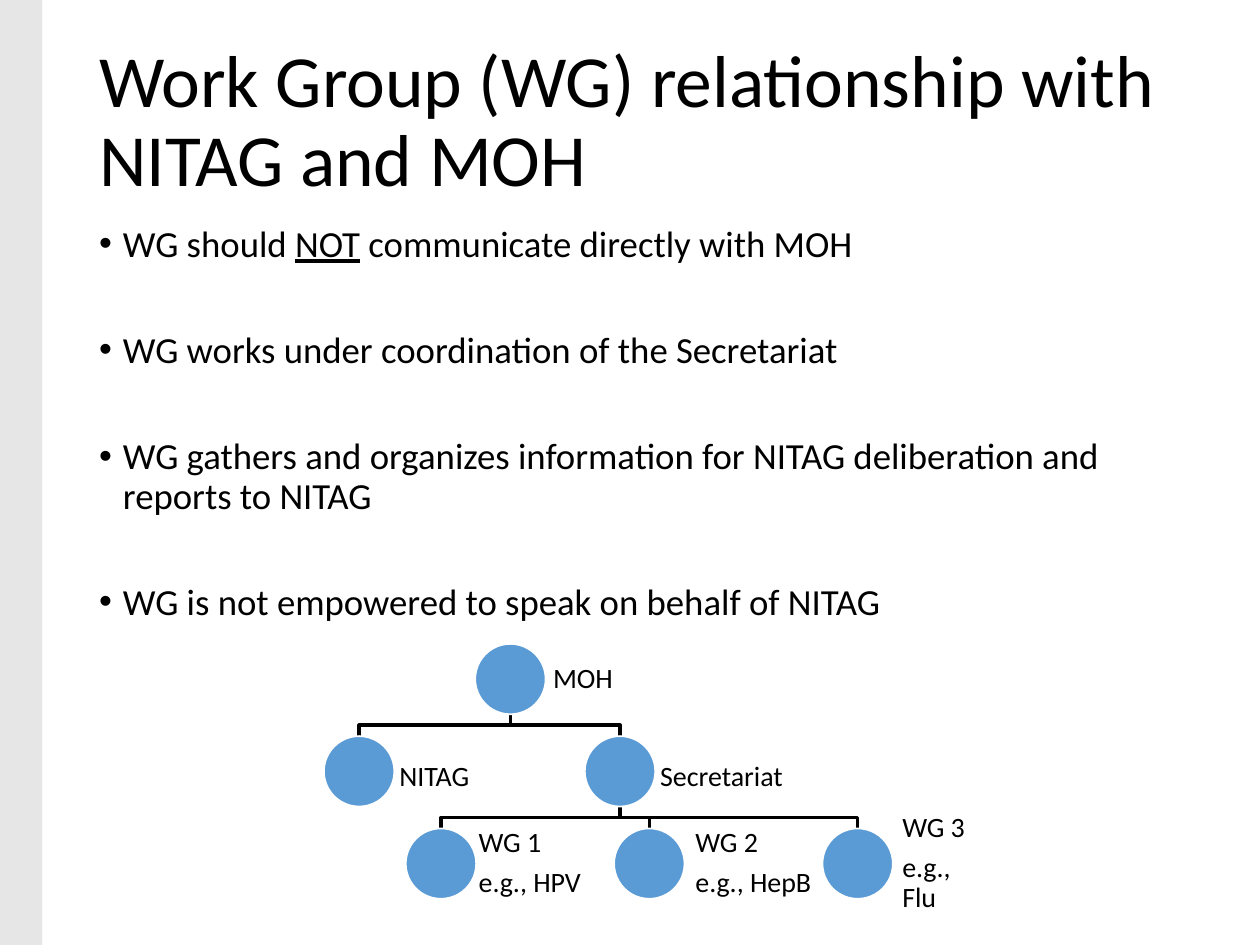
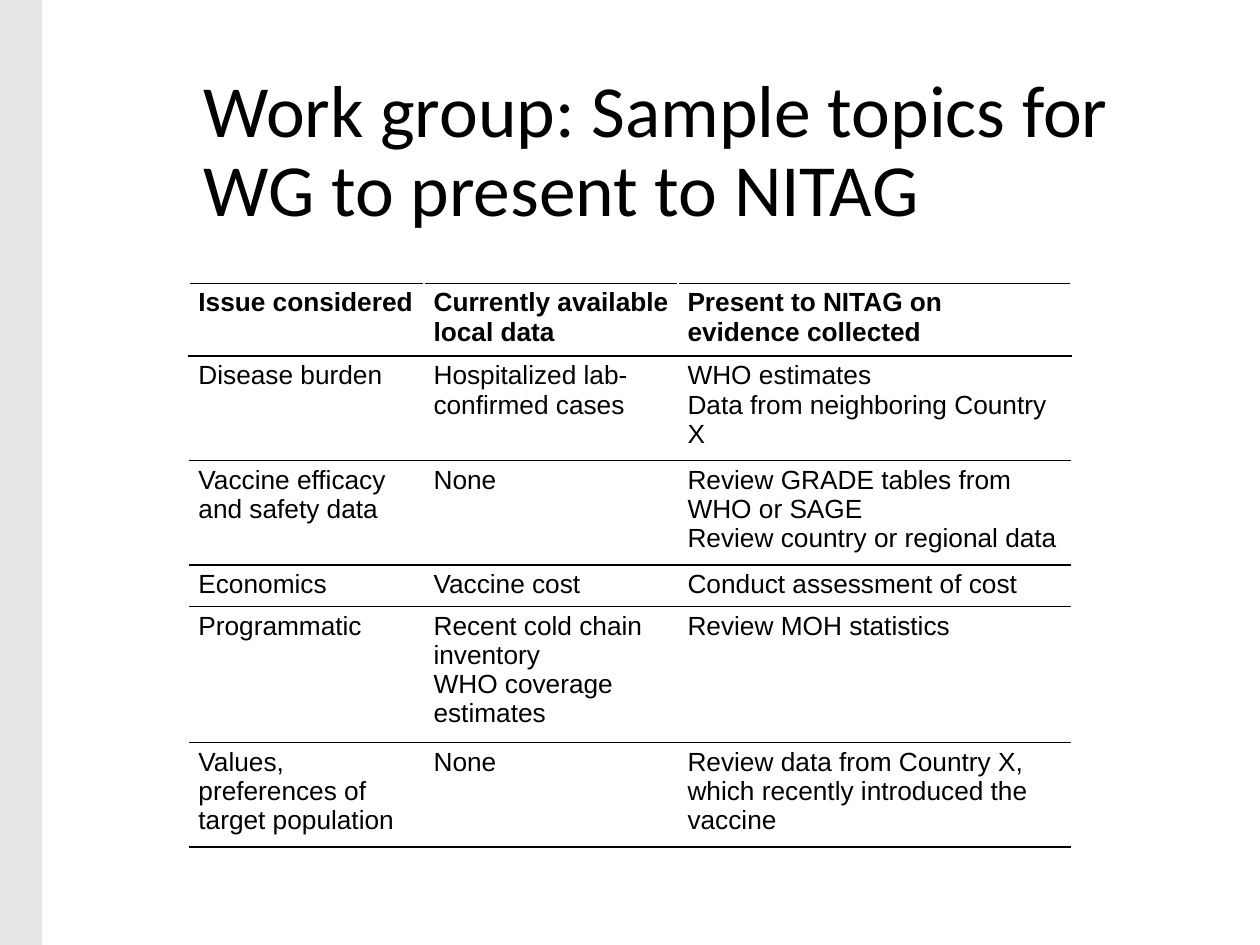
from itertools import product

from lxml.etree import SubElement
from pptx import Presentation
from pptx.dml.color import RGBColor
from pptx.enum.shapes import MSO_SHAPE as Shape
from pptx.enum.text import MSO_ANCHOR as Anchor
from pptx.oxml.ns import qn
from pptx.util import Cm, Pt

BLACK = RGBColor(0x00, 0x00, 0x00)
WHITE = RGBColor(0xFF, 0xFF, 0xFF)
BAND_GREY = RGBColor(0xE7, 0xE6, 0xE6)
NODE_BLUE = RGBColor(0x5B, 0x9B, 0xD5)

SLIDE_WIDTH, SLIDE_HEIGHT = 25.4, 19.05
HEADING_FONT, TABLE_FONT = "Calibri", "Arial"

BULLETS = [
    ["WG should ", "NOT", " communicate directly with MOH"],
    ["WG works under coordination of the Secretariat"],
    ["WG gathers and organizes information for NITAG deliberation and reports to NITAG"],
    ["WG is not empowered to speak on behalf of NITAG"],
]

NODE_SIZE = 1.42
CHART_TOP, LEVEL_STEP = 12.98, 1.86
GROUP_LEFT, GROUP_STEP = 8.89, 4.2

# name: parent, level, centre, label left, label drop, label width, label text
NODES = {
    "moh": (None, 0, 10.29, 10.97, 0, 2.77, "MOH"),
    "nitag": ("moh", 1, 7.24, 7.87, 0.13, 4.88, "NITAG"),
    "secretariat": ("moh", 1, 12.5, 13.13, 0.13, 4.45, "Secretariat"),
    "wg1": ("secretariat", 2, GROUP_LEFT, 9.47, 0, 2.77, "WG 1\ne.g., HPV"),
    "wg2": ("secretariat", 2, GROUP_LEFT + GROUP_STEP, 13.84, 0, 2.77, "WG 2\ne.g., HepB"),
    "wg3": ("secretariat", 2, GROUP_LEFT + 2 * GROUP_STEP, 18.01, 0, 2.08, "WG 3\ne.g., Flu"),
}

COLUMN_WIDTHS = [4.74, 5.12, 7.92]
ROW_HEIGHTS = [1.46, 1.96, 1.96, 0.83, 2.72, 1.96]
TOPICS = [
    ["Issue considered", "Currently available local data", "Present to NITAG on evidence collected"],
    ["Disease burden", "Hospitalized lab-confirmed cases",
     "WHO estimates\nData from neighboring Country X"],
    ["Vaccine efficacy and safety data", "None",
     "Review GRADE tables from WHO or SAGE\nReview country or regional data"],
    ["Economics", "Vaccine cost", "Conduct assessment of cost"],
    ["Programmatic", "Recent cold chain inventory\nWHO coverage estimates", "Review MOH statistics"],
    ["Values, preferences of target population", "None",
     "Review data from Country X, which recently introduced the vaccine"],
]


def format_text(text_frame, size, font=HEADING_FONT, bold=False, line_spacing=None, space_after=0):
    for paragraph in text_frame.paragraphs:
        paragraph.line_spacing = line_spacing
        paragraph.space_after = Pt(space_after)
        for run in paragraph.runs:
            run.font.size = Pt(size)
            run.font.name = font
            run.font.bold = bold
            run.font.color.rgb = BLACK


def add_text_frame(slide, left, top, width, height, anchor=Anchor.MIDDLE):
    box = slide.shapes.add_textbox(Cm(left), Cm(top), Cm(width), Cm(height))
    text_frame = box.text_frame
    text_frame.word_wrap = True
    text_frame.vertical_anchor = anchor
    return text_frame


def add_filled_shape(slide, kind, left, top, width, height, color):
    shape = slide.shapes.add_shape(kind, Cm(left), Cm(top), Cm(width), Cm(height))
    shape.shadow.inherit = False
    shape.fill.solid()
    shape.fill.fore_color.rgb = color
    shape.line.fill.background()
    return shape


def add_titled_slide(presentation, title, left, top, width, height):
    slide = presentation.slides.add_slide(presentation.slide_layouts[6])
    add_filled_shape(slide, Shape.RECTANGLE, 0, 0, 0.85, SLIDE_HEIGHT, BAND_GREY)
    text_frame = add_text_frame(slide, left, top, width, height)
    text_frame.text = title
    format_text(text_frame, 42, line_spacing=0.9)
    return slide


def add_bullets(slide, bullets, left, top, width, height):
    text_frame = add_text_frame(slide, left, top, width, height, Anchor.TOP)
    for index, pieces in enumerate(bullets):
        paragraph = text_frame.add_paragraph() if index else text_frame.paragraphs[0]
        for piece in pieces:
            run = paragraph.add_run()
            run.text = piece
            run.font.underline = piece == "NOT"
    format_text(text_frame, 21, line_spacing=0.9, space_after=38)
    for paragraph in text_frame.paragraphs:
        properties = paragraph._p.get_or_add_pPr()
        properties.set("marL", str(Cm(0.48)))
        properties.set("indent", str(-Cm(0.48)))
        SubElement(properties, qn("a:buFont"), typeface="Arial")
        SubElement(properties, qn("a:buChar"), char="•")


def node_top(level):
    return CHART_TOP + level * LEVEL_STEP


def add_branch(slide, parent, child):
    parent_level, parent_x = NODES[parent][1:3]
    child_level, child_x = NODES[child][1:3]
    start, end = node_top(parent_level) + NODE_SIZE, node_top(child_level)
    bend = (start + end) / 2
    builder = slide.shapes.build_freeform(Cm(parent_x), Cm(start))
    corners = [(parent_x, bend), (child_x, bend), (child_x, end)]
    builder.add_line_segments([(Cm(x), Cm(y)) for x, y in corners], close=False)
    branch = builder.convert_to_shape()
    branch.shadow.inherit = False
    branch.fill.background()
    branch.line.color.rgb = BLACK
    branch.line.width = Pt(2)


def add_node(slide, level, center, label_left, label_drop, label_width, label):
    top = node_top(level)
    circle = add_filled_shape(slide, Shape.OVAL, center - NODE_SIZE / 2, top,
                              NODE_SIZE, NODE_SIZE, NODE_BLUE)
    circle.line.color.rgb = WHITE
    circle.line.width = Pt(1)
    text_frame = add_text_frame(slide, label_left, top + label_drop, label_width, NODE_SIZE)
    text_frame.margin_left = text_frame.margin_right = Cm(0.18)
    text_frame.margin_top = text_frame.margin_bottom = Cm(0.18)
    text_frame.text = label
    format_text(text_frame, 16, line_spacing=0.9, space_after=5.6)


def add_organization_chart(slide):
    for name, (parent, *_) in NODES.items():
        if parent:
            add_branch(slide, parent, name)
    for _, *details in NODES.values():
        add_node(slide, *details)


def set_border(cell, side, color):
    line = SubElement(cell._tc.get_or_add_tcPr(), qn(f"a:ln{side}"), w=str(Pt(1)))
    if color is None:
        SubElement(line, qn("a:noFill"))
    else:
        fill = SubElement(line, qn("a:solidFill"))
        SubElement(fill, qn("a:srgbClr"), val=str(color))


def add_topic_table(slide, left, top):
    frame = slide.shapes.add_table(len(TOPICS), len(COLUMN_WIDTHS), Cm(left), Cm(top),
                                   Cm(sum(COLUMN_WIDTHS)), Cm(sum(ROW_HEIGHTS)))
    table = frame.table
    table.first_row = table.horz_banding = False
    for column, width in zip(table.columns, COLUMN_WIDTHS):
        column.width = Cm(width)
    for row, height in zip(table.rows, ROW_HEIGHTS):
        row.height = Cm(height)
    for row, column in product(range(len(TOPICS)), range(len(COLUMN_WIDTHS))):
        cell = table.cell(row, column)
        is_header = row == 0
        cell.text_frame.text = TOPICS[row][column]
        format_text(cell.text_frame, 15, TABLE_FONT, bold=is_header)
        cell.margin_left = cell.margin_right = Cm(0.19)
        cell.margin_top = cell.margin_bottom = Cm(0.1)
        side_color = WHITE if is_header else None
        for side, color in zip("LRTB", (side_color, side_color, BLACK, BLACK)):
            set_border(cell, side, color)
        cell.fill.background()


def main():
    presentation = Presentation()
    presentation.slide_width = Cm(SLIDE_WIDTH)
    presentation.slide_height = Cm(SLIDE_HEIGHT)

    relationship = add_titled_slide(
        presentation, "Work Group (WG) relationship with NITAG and MOH", 1.75, 0.64, 22.6, 3.68)
    add_bullets(relationship, BULLETS, 1.75, 4.42, 21.9, 12.1)
    add_organization_chart(relationship)

    topics = add_titled_slide(
        presentation, "Work group: Sample topics for WG to present to NITAG", 3.86, 1.7, 19.43, 2.77)
    add_topic_table(topics, 3.81, 5.71)

    presentation.save("out.pptx")


if __name__ == "__main__":
    main()
